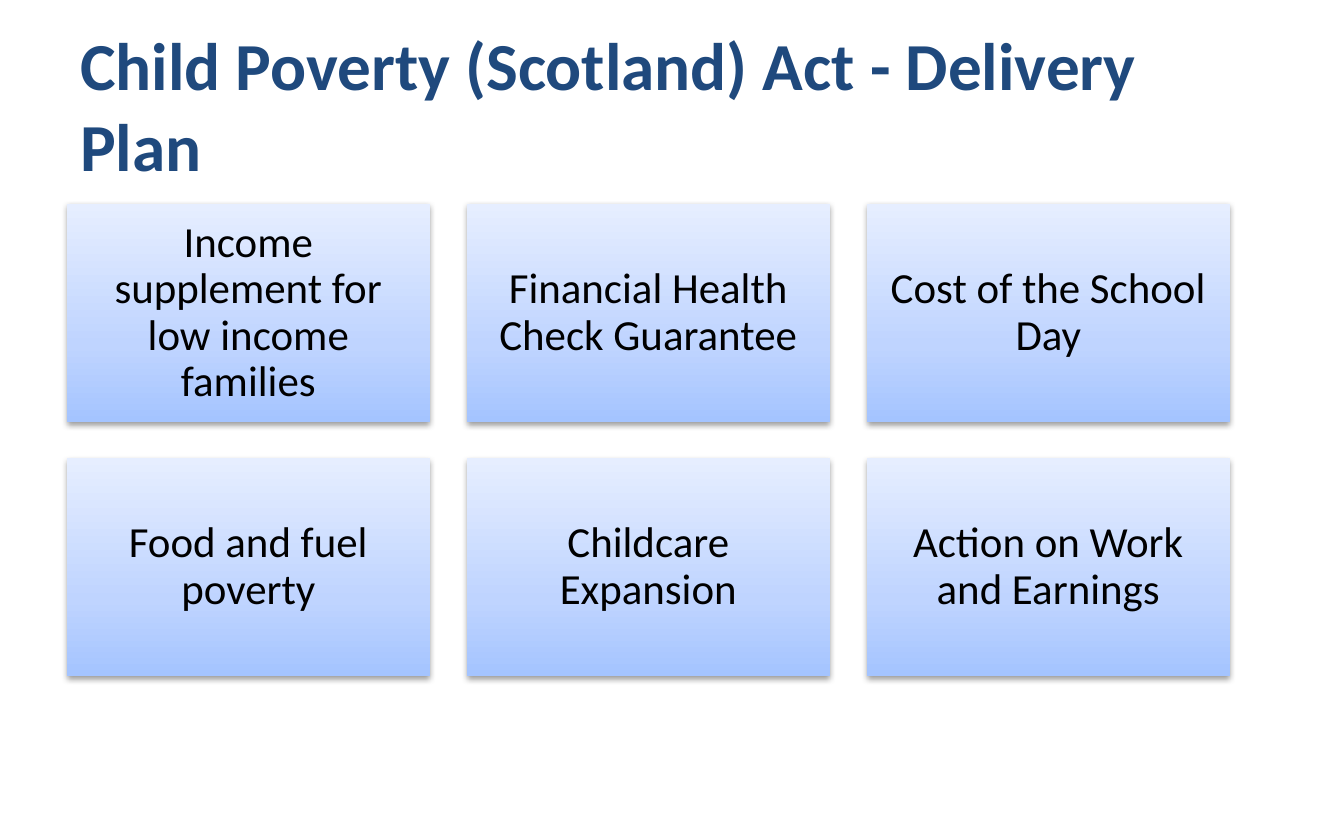
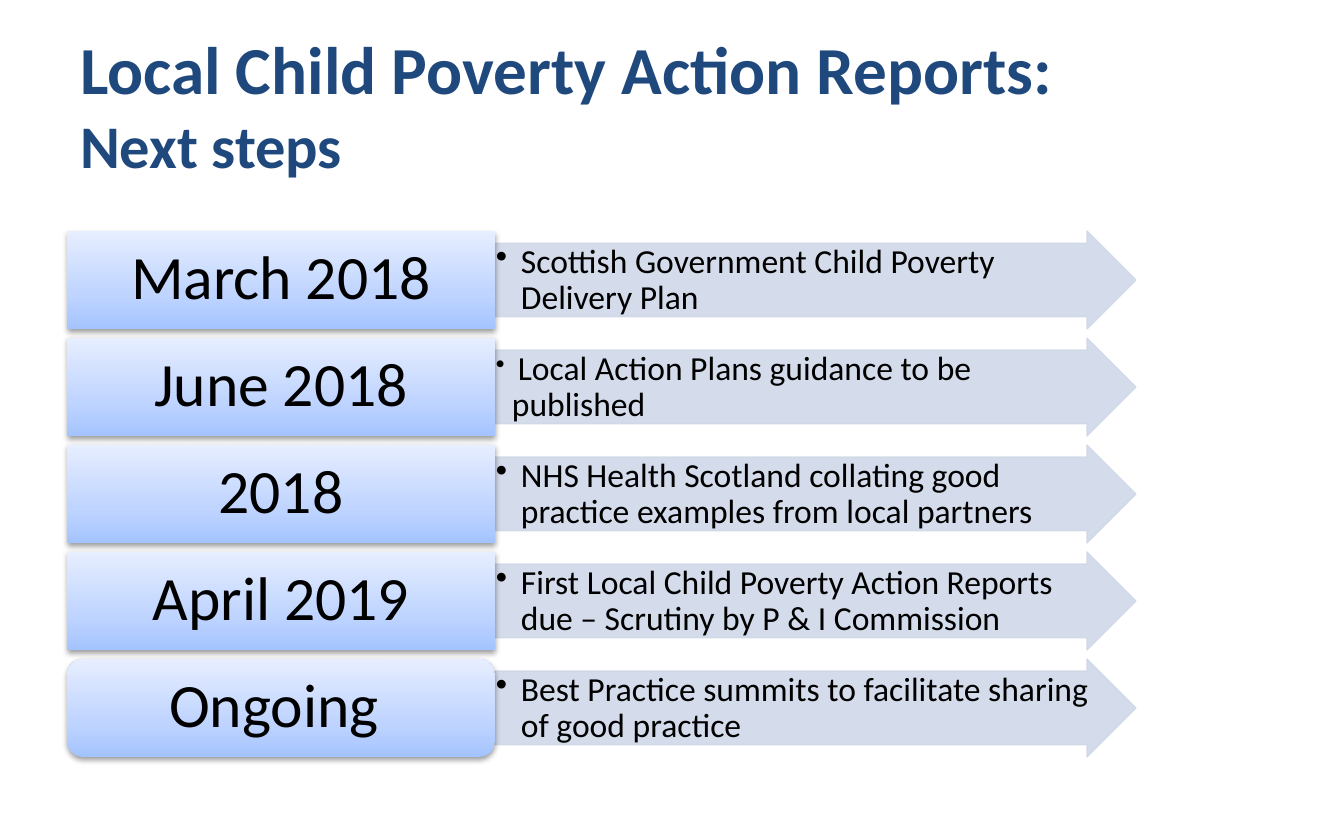
import lxml.etree
import pptx
import pptx.dml.color
import pptx.enum.shapes
import pptx.enum.text
import pptx.oxml
import pptx.oxml.ns
import pptx.util

PX = 914400 / 134.4  # EMU in one px
FONT = "Calibri"
COLORS = {
    "title": "1F497D",
    "text": "000000",
    "arrow": "D0D8E8",
    "shadow": "000000",
    "blue_low": "A4C4FF",
    "blue_mid": "BFD4FF",
    "blue_high": "E6EEFF",
}
LEFT = 67
NS = pptx.oxml.ns.nsdecls("a")
SHAPES = pptx.enum.shapes.MSO_SHAPE
ALIGN = pptx.enum.text.PP_ALIGN
ANCHOR = pptx.enum.text.MSO_ANCHOR

GRADIENT = f"""<a:gradFill {NS} rotWithShape="1"><a:gsLst>
<a:gs pos="0"><a:srgbClr val="{COLORS['blue_low']}"/></a:gs>
<a:gs pos="35000"><a:srgbClr val="{COLORS['blue_mid']}"/></a:gs>
<a:gs pos="100000"><a:srgbClr val="{COLORS['blue_high']}"/></a:gs>
</a:gsLst><a:lin ang="16200000" scaled="1"/></a:gradFill>"""
SHADOW = f"""<a:effectLst {NS}>
<a:outerShdw blurRad="40000" dist="20000" dir="5400000" rotWithShape="0">
<a:srgbClr val="{COLORS['shadow']}"><a:alpha val="38000"/></a:srgbClr>
</a:outerShdw></a:effectLst>"""


def style_text(shape, size, color, align, inset_x, inset_y, bold=False):
    frame = shape.text_frame
    frame.word_wrap = True
    frame.auto_size = pptx.enum.text.MSO_AUTO_SIZE.NONE
    frame.vertical_anchor = ANCHOR.MIDDLE
    frame.margin_left = frame.margin_right = round(inset_x * PX)
    frame.margin_top = frame.margin_bottom = round(inset_y * PX)
    for para in frame.paragraphs:
        para.alignment = align
        for span in para.runs:
            span.font.name = FONT
            span.font.size = pptx.util.Pt(size)
            span.font.bold = bold
            span.font.color.rgb = pptx.dml.color.RGBColor.from_string(COLORS[color])


def add_panel(page, kind, place, text, size, inset_x, inset_y):
    """Add a blue gradient panel with a soft shadow and centred text."""
    panel = page.shapes.add_shape(kind, *[round(value * PX) for value in place])
    panel.line.fill.background()
    properties = panel._element.spPr
    properties.find(pptx.oxml.ns.qn("a:ln")).addprevious(pptx.oxml.parse_xml(GRADIENT))
    properties.append(pptx.oxml.parse_xml(SHADOW))
    panel.text_frame.text = text
    style_text(panel, size, "text", ALIGN.CENTER, inset_x, inset_y)
    panel.text_frame.paragraphs[0].line_spacing = 0.9


deck = pptx.Presentation()
deck.slide_width = round(1344 * PX)
deck.slide_height = round(840 * PX)

# Pages with their titles
pages = []
for heading in (
    "Child Poverty (Scotland) Act - Delivery Plan",
    "Local Child Poverty Action Reports:\vNext steps",
):
    page = deck.slides.add_slide(deck.slide_layouts[5])
    title = page.shapes.title
    title.left, title.top = round(LEFT * PX), round(34 * PX)
    title.width, title.height = round(1210 * PX), round(140 * PX)
    title.text_frame.text = heading
    style_text(title, 36, "title", ALIGN.LEFT, 13, 7, bold=True)
    pages.append(page)
plan_page, steps_page = pages
steps_page.shapes.title.text_frame.paragraphs[0].runs[1].font.size = pptx.util.Pt(32.4)

# Delivery plan: actions in a grid of three columns
actions = [
    "Income supplement for low income families",
    "Financial Health Check Guarantee",
    "Cost of the School Day",
    "Food and fuel poverty",
    "Childcare Expansion",
    "Action on Work and Earnings",
]
for index, action in enumerate(actions):
    row, column = divmod(index, 3)
    place = (LEFT + column * 400, 204 + row * 254, 363, 218)
    add_panel(plan_page, SHAPES.RECTANGLE, place, action, 23, 13, 13)

# Next steps: a date panel and an arrow in each row
steps = [
    ("March 2018", "Scottish Government Child Poverty Delivery Plan"),
    ("June 2018", " Local Action Plans guidance to be published"),
    ("2018", "NHS Health Scotland collating good practice examples from local partners"),
    ("April 2019", "First Local Child Poverty Action Reports due – Scrutiny by P & I Commission"),
    ("Ongoing ", "Best Practice summits to facilitate sharing of good practice"),
]
DATE_WIDTH, ROW_HEIGHT = 428, 98
for index, (date, step) in enumerate(steps):
    top = 231 + index * 107
    arrow = steps_page.shapes.add_shape(
        SHAPES.RIGHT_ARROW,
        *[round(value * PX) for value in (LEFT + DATE_WIDTH, top, 641, ROW_HEIGHT)],
    )
    arrow.adjustments[0], arrow.adjustments[1] = 0.75, 0.5
    arrow.shadow.inherit = False
    arrow.fill.solid()
    arrow.line.width = pptx.util.Pt(0.75)
    for paint in (arrow.fill, arrow.line.fill):
        paint.solid()
        paint.fore_color.rgb = pptx.dml.color.RGBColor.from_string(COLORS["arrow"])
    for tint in arrow._element.spPr.iter(pptx.oxml.ns.qn("a:srgbClr")):
        lxml.etree.SubElement(tint, pptx.oxml.ns.qn("a:alpha"), val="90000")

    # Bulleted step; a small first run gives a smaller bullet
    para = arrow.text_frame.paragraphs[0]
    small_bullet = step.startswith(" ")
    for piece in ((" ", step.lstrip()) if small_bullet else (step,)):
        para.add_run().text = piece
    style_text(arrow, 18, "text", ALIGN.LEFT, 1, 1)
    arrow.text_frame.vertical_anchor = ANCHOR.TOP
    if small_bullet:
        para.runs[0].font.size = pptx.util.Pt(14)
    para.level = 1
    para.line_spacing = 0.9
    indent = round((16 if small_bullet else 25) * PX)
    bullet = para._p.get_or_add_pPr()
    bullet.set("marL", str(indent))
    bullet.set("indent", str(-indent))
    lxml.etree.SubElement(bullet, pptx.oxml.ns.qn("a:buChar"), char="•")

    kind = SHAPES.ROUNDED_RECTANGLE if index == len(steps) - 1 else SHAPES.RECTANGLE
    add_panel(steps_page, kind, (LEFT, top, DATE_WIDTH, ROW_HEIGHT), date, 33, 19, 9)

deck.save("out.pptx")
